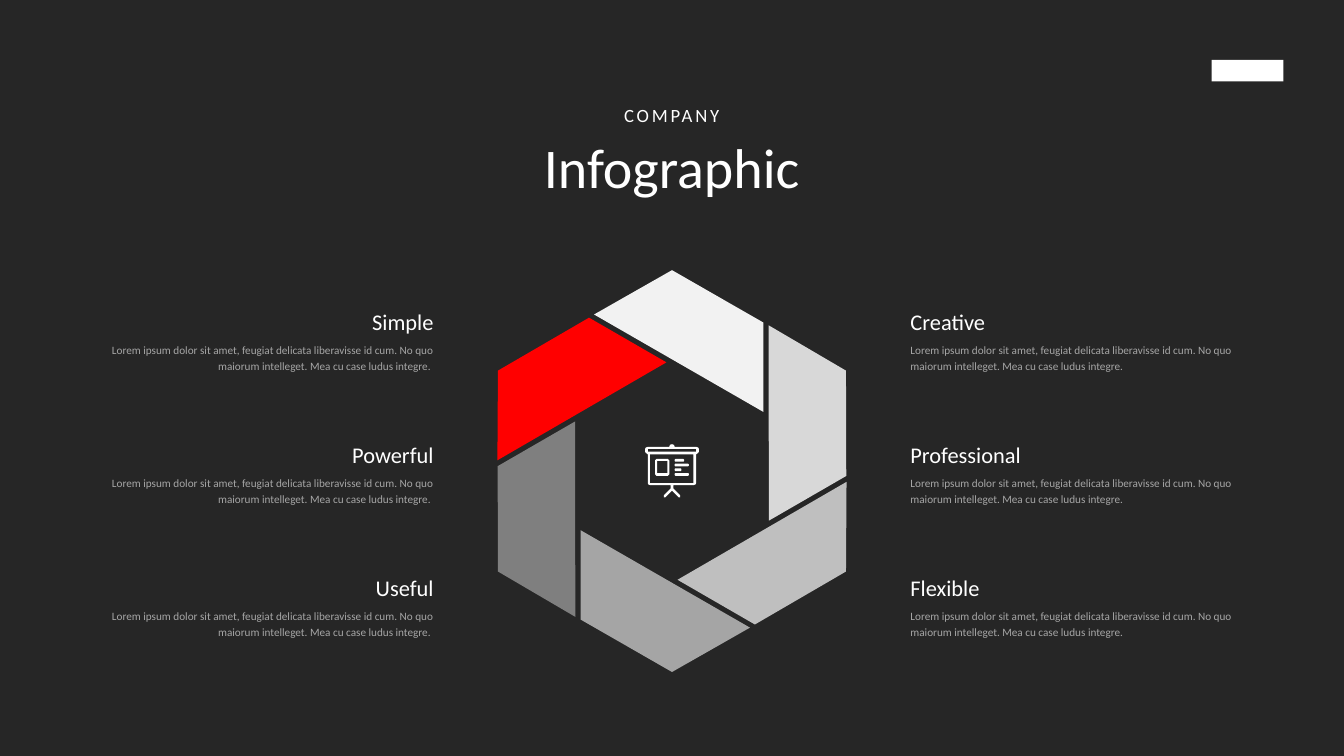
from math import cos, radians, sin

from pptx import Presentation
from pptx.dml.color import RGBColor
from pptx.enum.shapes import MSO_SHAPE
from pptx.enum.text import MSO_AUTO_SIZE, PP_ALIGN
from pptx.util import Inches, Pt

RECTANGLE = MSO_SHAPE.RECTANGLE
GROW_TO_TEXT = MSO_AUTO_SIZE.SHAPE_TO_FIT_TEXT
LEFT, CENTER, RIGHT = PP_ALIGN.LEFT, PP_ALIGN.CENTER, PP_ALIGN.RIGHT

BACKGROUND = RGBColor(0x26, 0x26, 0x26)
WHITE = RGBColor(0xFF, 0xFF, 0xFF)
BODY_GRAY = RGBColor(0xA6, 0xA6, 0xA6)
BLADE_COLORS = [
    RGBColor(0xF2, 0xF2, 0xF2),
    RGBColor(0xD8, 0xD8, 0xD8),
    RGBColor(0xBF, 0xBF, 0xBF),
    RGBColor(0xA5, 0xA5, 0xA5),
    RGBColor(0x7F, 0x7F, 0x7F),
    RGBColor(0xFF, 0x00, 0x00),
]

FONT = "Calibri"
BODY = ("Lorem ipsum dolor sit amet, feugiat delicata liberavisse id cum. "
        "No quo maiorum intelleget. Mea cu case ludus integre.")

# Hexagon centre, and the top blade measured from it
CENTER_X, CENTER_Y = 10, 7.01
BLADE = [(0, -2.99), (1.36, -2.21), (1.36, -0.88), (-1.16, -2.33)]

# Right half of the easel outline, from top to bottom
EASEL_HALF = [
    (10, 6.61), (10.03, 6.62), (10.04, 6.65), (10.36, 6.65), (10.39, 6.66),
    (10.4, 6.68), (10.4, 6.72), (10.39, 6.74), (10.36, 6.76), (10.36, 7.19),
    (10.35, 7.21), (10.32, 7.22), (10.02, 7.22), (10.02, 7.27),
    (10.12, 7.37), (10.12, 7.4), (10.1, 7.4), (10, 7.3),
]


def style_shape(shape, color):
    shape.shadow.inherit = False
    shape.fill.solid()
    shape.fill.fore_color.rgb = color
    shape.line.fill.background()


def add_outline(slide, contours, color):
    """Draw one filled freeform; inner contours become holes."""
    scaled = [[(Inches(x), Inches(y)) for x, y in contour] for contour in contours]
    builder = slide.shapes.build_freeform(*scaled[0][0], scale=1.0)
    for index, contour in enumerate(scaled):
        if index:
            builder.move_to(*contour[0])
        builder.add_line_segments(contour[1:], close=True)
    style_shape(builder.convert_to_shape(), color)


def rotate(point, degrees):
    x, y = point
    angle = radians(degrees)
    return (CENTER_X + x * cos(angle) - y * sin(angle),
            CENTER_Y + x * sin(angle) + y * cos(angle))


def box(left, top, right, bottom, cut=0):
    """Corner points of a rectangle, with optional cut corners."""
    if not cut:
        return [(left, top), (right, top), (right, bottom), (left, bottom)]
    return [(left + cut, top), (right - cut, top), (right, top + cut),
            (right, bottom - cut), (right - cut, bottom), (left + cut, bottom),
            (left, bottom - cut), (left, top + cut)]


def add_easel_icon(slide):
    mirrored = [(2 * CENTER_X - x, y) for x, y in EASEL_HALF[-2:0:-1]]
    contours = [
        EASEL_HALF + mirrored,
        box(9.64, 6.68, 10.36, 6.72),
        box(9.67, 6.76, 10.32, 7.19),
        box(9.75, 6.83, 9.96, 7.08, 0.02),
        box(9.78, 6.86, 9.93, 7.04),
    ]
    # Text lines on the board
    for index, right in enumerate([10.18, 10.25, 10.14, 10.25]):
        top = 6.83 + 0.07 * index
        contours.append(box(10.04, top, right, top + 0.04, 0.01))
    add_outline(slide, contours, WHITE)


def add_text_box(slide, left, top, width, height):
    text_box = slide.shapes.add_textbox(
        Inches(left), Inches(top), Inches(width), Inches(height))
    text_box.text_frame.word_wrap = True
    text_box.text_frame.auto_size = GROW_TO_TEXT
    return text_box.text_frame


def add_run(paragraph, text, size, color, alignment, space_before):
    paragraph.alignment = alignment
    paragraph.space_before = Pt(space_before)
    run = paragraph.add_run()
    run.text = text
    run.font.name = FONT
    run.font.size = Pt(size)
    run.font.color.rgb = color
    return run


def add_title(slide):
    frame = add_text_box(slide, 5.97, 1.5, 8.05, 1.53)
    label = add_run(frame.paragraphs[0], "COMPANY", 20, WHITE, CENTER, 12)
    label.font._element.set("spc", "300")
    add_run(frame.add_paragraph(), "Infographic", 60, WHITE, CENTER, 6)


def add_feature(slide, left, top, heading, body, alignment):
    frame = add_text_box(slide, left, top, 5.37, 1.15)
    add_run(frame.paragraphs[0], heading, 24, WHITE, alignment, 6)
    add_run(frame.add_paragraph(), body, 12, BODY_GRAY, alignment, 6)
    for paragraph in frame.paragraphs:
        paragraph.line_spacing = 1.2


def main():
    presentation = Presentation()
    presentation.slide_width = Inches(20)
    presentation.slide_height = Inches(11.25)
    slide = presentation.slides.add_slide(presentation.slide_layouts[6])
    slide.background.fill.solid()
    slide.background.fill.fore_color.rgb = BACKGROUND

    # Plain brand mark in the corner
    mark = slide.shapes.add_shape(
        RECTANGLE, Inches(18.03), Inches(0.89), Inches(1.07), Inches(0.32))
    style_shape(mark, WHITE)

    # Hexagon of six blades
    for index, color in enumerate(BLADE_COLORS):
        blade = [rotate(point, 60 * index) for point in BLADE]
        add_outline(slide, [blade], color)
    add_easel_icon(slide)

    add_title(slide)

    # Features on both sides of the hexagon
    columns = [
        (1.18, RIGHT, BODY + " ", ["Simple", "Powerful", "Useful"]),
        (13.45, LEFT, BODY, ["Creative", "Professional", "Flexible"]),
    ]
    for left, alignment, body, headings in columns:
        for row, heading in enumerate(headings):
            add_feature(slide, left, 4.45 + 1.98 * row, heading, body, alignment)

    presentation.save("out.pptx")


if __name__ == "__main__":
    main()
